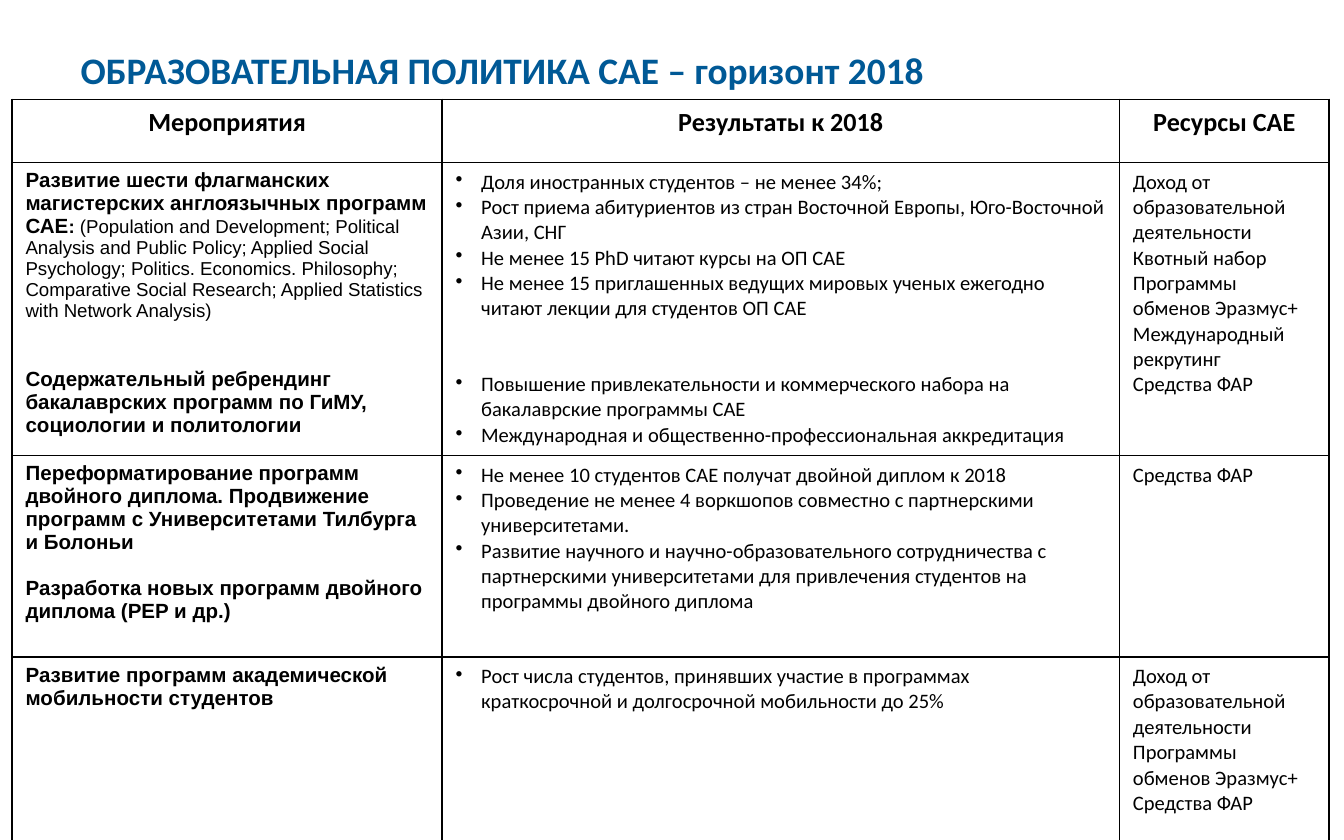
import pptx
import pptx.dml.color
import pptx.enum.text
import pptx.oxml
import pptx.oxml.ns
import pptx.util

Inches = pptx.util.Inches
Pt = pptx.util.Pt
ALIGN = pptx.enum.text.PP_ALIGN

TITLE = "ОБРАЗОВАТЕЛЬНАЯ ПОЛИТИКА САЕ – горизонт 2018"
HEADINGS = ["Мероприятия", "Результаты к 2018", "Ресурсы САЕ"]
INCOME = "Доход от образовательной деятельности"
EXCHANGE = "Программы обменов Эразмус+"
FUND = "Средства ФАР"
PROGRAMS = (
    "(Population and Development; Political Analysis and Public Policy; "
    "Applied Social Psychology; Politics. Economics. Philosophy; "
    "Comparative Social Research; Applied Statistics with Network Analysis)"
)
ROWS = [
    {
        "activities": [
            [("activity", "Развитие шести флагманских магистерских англоязычных программ САЕ"),
             ("colon", ": "), ("programs", PROGRAMS)],
            "Содержательный ребрендинг бакалаврских программ по ГиМУ, социологии и политологии",
        ],
        "results": [
            "Доля иностранных студентов – не менее 34%;",
            "Рост приема абитуриентов из стран Восточной Европы, Юго-Восточной Азии, СНГ",
            "Не менее 15 PhD читают курсы на ОП САЕ",
            "Не менее 15 приглашенных ведущих мировых ученых ежегодно читают лекции для студентов ОП САЕ",
            "Повышение привлекательности и коммерческого набора на бакалаврские программы САЕ",
            "Международная и общественно-профессиональная аккредитация",
        ],
        "resources": [INCOME, "Квотный набор", EXCHANGE, "Международный рекрутинг", FUND],
        "gaps": {("activities", 1): 25, ("results", 4): 27},
    },
    {
        "activities": [
            "Переформатирование программ двойного диплома. Продвижение программ "
            "с Университетами Тилбурга и Болоньи",
            "Разработка новых программ двойного диплома (PEP и др.)",
        ],
        "results": [
            "Не менее 10 студентов САЕ получат двойной диплом к 2018",
            "Проведение не менее 4 воркшопов совместно с партнерскими университетами.",
            "Развитие научного и научно-образовательного сотрудничества с партнерскими "
            "университетами для привлечения студентов на программы двойного диплома",
        ],
        "resources": [FUND],
        "gaps": {("activities", 1): 12.5},
    },
    {
        "activities": ["Развитие программ академической мобильности студентов"],
        "results": [
            "Рост числа студентов, принявших участие в программах краткосрочной "
            "и долгосрочной мобильности до 25%",
        ],
        "resources": [INCOME, EXCHANGE, FUND],
        "gaps": {},
    },
]
COLUMNS = {"activities": "activity", "results": "detail", "resources": "detail"}
COLUMN_WIDTHS = [3.2, 5.04, 1.56]
ROW_HEIGHTS = [0.47, 2.18, 1.5, 1.38]
BLACK, WHITE, BLUE = "000000", "FFFFFF", "005996"
FONTS = {
    "title": ({"name": "Calibri", "size": Pt(20), "bold": True}, BLUE),
    "heading": ({"name": "Calibri", "size": Pt(14), "bold": True}, BLACK),
    "activity": ({"name": "Arial", "size": Pt(11), "bold": True}, BLACK),
    "colon": ({"name": "Arial", "size": Pt(10), "bold": True}, BLACK),
    "programs": ({"name": "Arial", "size": Pt(10), "bold": False}, BLACK),
    "detail": ({"name": "Calibri", "size": Pt(11), "bold": False}, BLACK),
}


def paint(target, color):
    target.rgb = pptx.dml.color.RGBColor.from_string(color)


def apply(target, values):
    for key, value in values.items():
        setattr(target, key, value)


def add_runs(paragraph, runs):
    for style, text in runs:
        run = paragraph.add_run()
        run.text = text
        values, color = FONTS[style]
        apply(run.font, values)
        paint(run.font.color, color)


def add_bullet(paragraph):
    properties = paragraph._p.get_or_add_pPr()
    apply_indent = {"marL": Inches(0.19), "indent": -Inches(0.19)}
    for key, value in apply_indent.items():
        properties.set(key, str(value))
    properties.append(pptx.oxml.parse_xml(
        f'<a:buChar {pptx.oxml.ns.nsdecls("a")} char="•"/>'))


def frame_cell(cell):
    properties = cell._tc.get_or_add_tcPr()
    for side in "LRTB":
        properties.append(pptx.oxml.parse_xml(
            f'<a:ln{side} {pptx.oxml.ns.nsdecls("a")} w="{Pt(1)}"><a:solidFill>'
            f'<a:srgbClr val="{BLACK}"/></a:solidFill></a:ln{side}>'))
    cell.fill.solid()
    paint(cell.fill.fore_color, WHITE)


def fill_cell(cell, column, items, gaps):
    for index, item in enumerate(items):
        frame = cell.text_frame
        paragraph = frame.add_paragraph() if index else frame.paragraphs[0]
        if (column, index) in gaps:
            paragraph.space_before = Pt(gaps[column, index])
        if column == "results":
            add_bullet(paragraph)
        add_runs(paragraph, [(COLUMNS[column], item)] if isinstance(item, str) else item)


def main():
    deck = pptx.Presentation()
    apply(deck, {"slide_width": Inches(10), "slide_height": Inches(6.25)})
    slide = deck.slides.add_slide(deck.slide_layouts[5])

    title = slide.shapes.title
    apply(title, {"left": Inches(0.6), "top": Inches(0.13),
                  "width": Inches(8.07), "height": Inches(0.77)})
    apply(title.text_frame, {
        "margin_left": 0, "margin_right": 0, "margin_top": 0, "margin_bottom": 0,
        "word_wrap": True, "auto_size": pptx.enum.text.MSO_AUTO_SIZE.NONE,
        "vertical_anchor": pptx.enum.text.MSO_ANCHOR.MIDDLE})
    title_line = title.text_frame.paragraphs[0]
    title_line.alignment = ALIGN.LEFT
    add_runs(title_line, [("title", TITLE)])

    policy = slide.shapes.add_table(
        len(ROW_HEIGHTS), len(COLUMN_WIDTHS), Inches(0.09), Inches(0.74),
        Inches(sum(COLUMN_WIDTHS)), Inches(sum(ROW_HEIGHTS))).table
    for column, width in zip(policy.columns, COLUMN_WIDTHS):
        column.width = Inches(width)
    for row, height in zip(policy.rows, ROW_HEIGHTS):
        row.height = Inches(height)
    for cell in policy.iter_cells():
        frame_cell(cell)

    for index, heading in enumerate(HEADINGS):
        heading_line = policy.cell(0, index).text_frame.paragraphs[0]
        heading_line.alignment = ALIGN.CENTER
        add_runs(heading_line, [("heading", heading)])
    for row_index, row in enumerate(ROWS, 1):
        for column_index, column in enumerate(COLUMNS):
            fill_cell(policy.cell(row_index, column_index), column, row[column], row["gaps"])

    deck.save("out.pptx")


if __name__ == "__main__":
    main()
